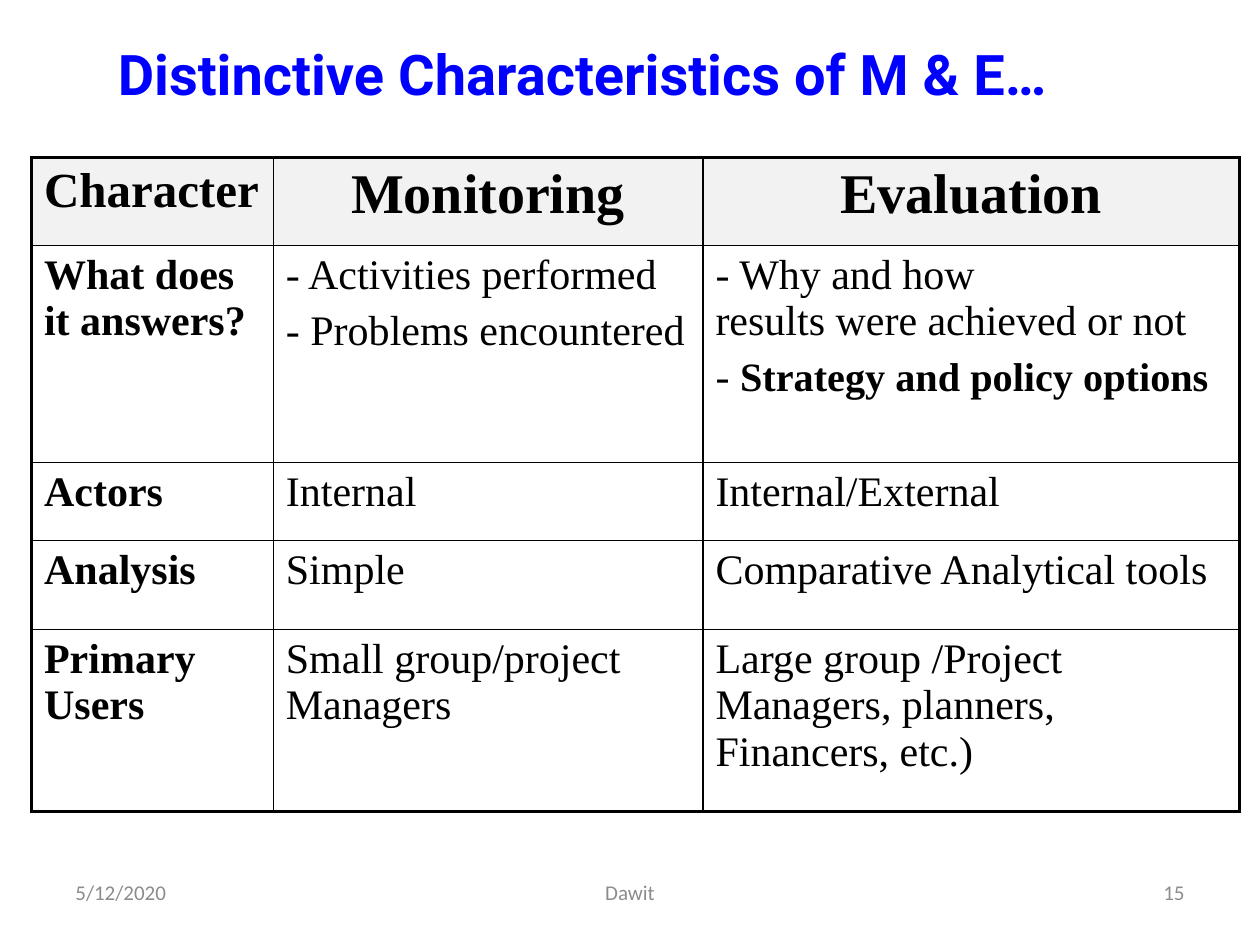
"""Build a slide with a table that compares monitoring and evaluation."""
from dataclasses import dataclass

from lxml import etree
from pptx import Presentation
from pptx.dml.color import RGBColor
from pptx.enum import text
from pptx.oxml import ns
from pptx.util import Pt


@dataclass(frozen=True)
class Theme:
    title_font: str = "Roboto"
    table_font: str = "Times New Roman"
    footer_font: str = "Calibri"
    title_color: str = "0000FF"
    ink: str = "000000"
    footer_color: str = "8C8C8C"
    header_fill: str = "F2F2F2"
    body_fill: str = "FFFFFF"
    title_size: float = 32
    corner_size: float = 28
    body_size: float = 24
    strong_size: float = 23
    footer_size: float = 12
    outer_line: float = 2.25
    inner_line: float = 1
    para_gap: float = 5.3


THEME = Theme()
ALIGN = text.PP_ALIGN
COLUMNS = [138.2, 245.5, 306.7]
ROW_HEIGHTS = [50.4, 123.8, 44.6, 51.1, 103.7]
STRONG = "Strategy and policy options"
ROWS = [
    [["Character"], ["Monitoring"], ["Evaluation"]],
    [["What does it answers?"],
     ["- Activities performed", "- Problems encountered"],
     ["- Why and how\vresults were achieved or not", "- " + STRONG]],
    [["Actors"], ["Internal"], ["Internal/External"]],
    [["Analysis"], ["Simple"], ["Comparative Analytical tools"]],
    [["Primary Users"], ["Small group/project Managers"],
     ["Large group /Project Managers, planners, Financers, etc.)"]],
]


def style_span(span, font, size, color, bold=False):
    span.font.name = font
    span.font.size = Pt(size)
    span.font.color.rgb = RGBColor.from_string(color)
    span.font.bold = bold


def add_label(page, bounds, words, align, font, size, color, bold=False):
    box = page.shapes.add_textbox(*(Pt(length) for length in bounds))
    frame = box.text_frame
    frame.word_wrap = True
    frame.vertical_anchor = text.MSO_ANCHOR.MIDDLE
    frame.text = words
    para = frame.paragraphs[0]
    para.alignment = align
    for span in para.runs:
        style_span(span, font, size, color, bold)


def set_borders(cell, row, column):
    """Draw heavy lines on the table's rim and thin lines inside it."""
    on_rim = {
        "L": column == 0,
        "R": column == len(COLUMNS) - 1,
        "T": row == 0,
        "B": row == len(ROWS) - 1,
    }
    properties = cell._tc.get_or_add_tcPr()
    for index, (side, outer) in enumerate(on_rim.items()):
        width = THEME.outer_line if outer else THEME.inner_line
        line = etree.Element(ns.qn(f"a:ln{side}"), w=str(int(Pt(width))))
        fill = etree.SubElement(line, ns.qn("a:solidFill"))
        etree.SubElement(fill, ns.qn("a:srgbClr"), val=THEME.ink)
        properties.insert(index, line)


def fill_cell(cell, paragraphs, row, column):
    header = row == 0
    size = THEME.body_size
    if header:
        size = THEME.title_size if column else THEME.corner_size
    cell.fill.solid()
    cell.fill.fore_color.rgb = RGBColor.from_string(
        THEME.header_fill if header else THEME.body_fill)
    frame = cell.text_frame
    for index, words in enumerate(paragraphs):
        para = frame.add_paragraph() if index else frame.paragraphs[0]
        para.text = words.removesuffix(STRONG)
        para.alignment = ALIGN.CENTER if header and column else ALIGN.LEFT
        para.space_before = Pt(THEME.para_gap if index else 0)
        for span in para.runs:
            style_span(span, THEME.table_font, size, THEME.ink,
                       header or column == 0)
        if words.endswith(STRONG):
            span = para.add_run()
            span.text = STRONG
            style_span(span, THEME.table_font, THEME.strong_size,
                       THEME.ink, True)
    set_borders(cell, row, column)


def add_comparison(page):
    frame = page.shapes.add_table(
        len(ROWS), len(COLUMNS), Pt(18), Pt(90),
        Pt(sum(COLUMNS)), Pt(sum(ROW_HEIGHTS)))
    table = frame.table
    table.first_row = False
    table.horz_banding = False
    for column, width in zip(table.columns, COLUMNS):
        column.width = Pt(width)
    for row, height in zip(table.rows, ROW_HEIGHTS):
        row.height = Pt(height)
    for row, cells in enumerate(ROWS):
        for column, paragraphs in enumerate(cells):
            fill_cell(table.cell(row, column), paragraphs, row, column)


def add_footer(page):
    for left, width, words, align in [
        (36, 168, "5/12/2020", ALIGN.LEFT),
        (246, 228, "Dawit", ALIGN.CENTER),
        (516, 168, "15", ALIGN.RIGHT),
    ]:
        add_label(page, (left, 492, width, 36), words, align,
                  THEME.footer_font, THEME.footer_size, THEME.footer_color)


def main():
    deck = Presentation()
    deck.slide_width, deck.slide_height = Pt(720), Pt(540)
    page = deck.slides.add_slide(deck.slide_layouts[6])
    add_label(page, (12, 18, 642, 48), "Distinctive Characteristics of M & E…",
              ALIGN.CENTER, THEME.title_font, THEME.title_size,
              THEME.title_color, True)
    add_comparison(page)
    add_footer(page)
    deck.save("out.pptx")


if __name__ == "__main__":
    main()
